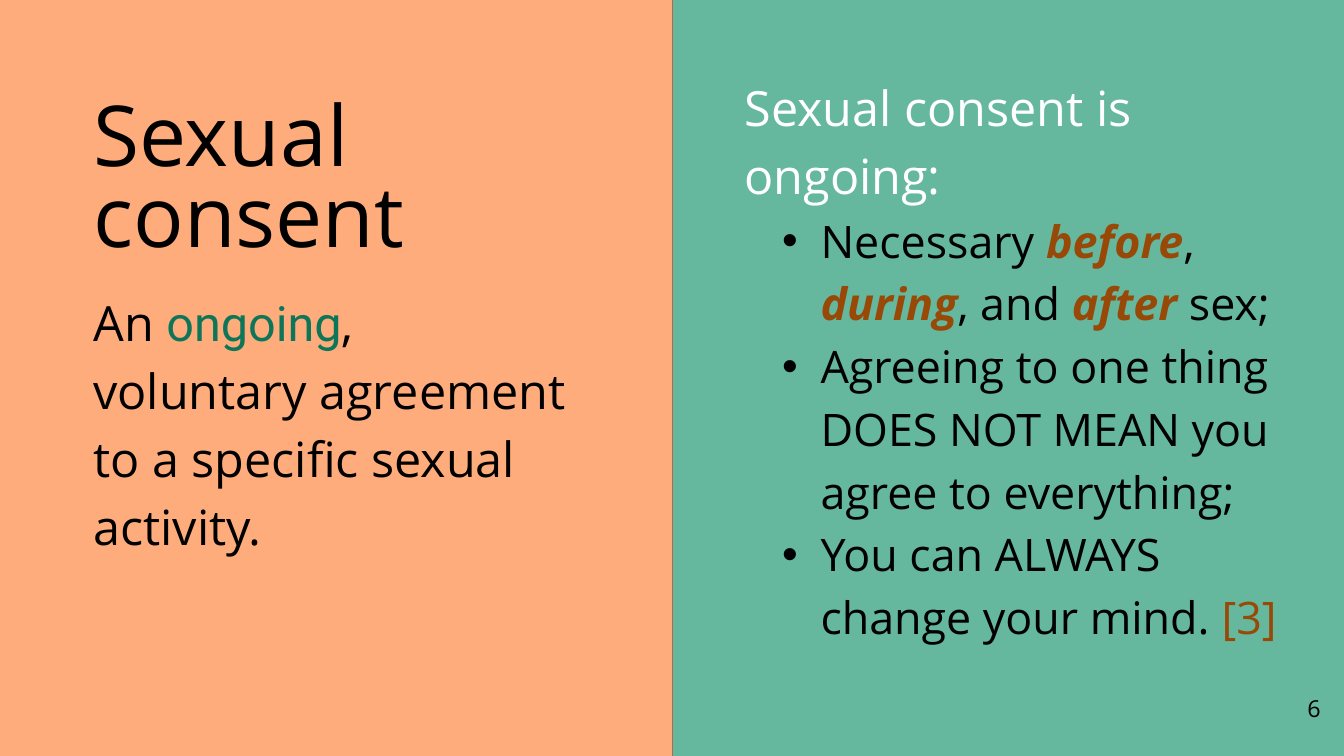
import pptx
import pptx.util
import pptx.dml.color
import pptx.enum.shapes
import pptx.enum.text
import pptx.oxml
import pptx.oxml.ns
import lxml.etree

Inches = pptx.util.Inches
Pt = pptx.util.Pt
ALIGN = pptx.enum.text.PP_ALIGN
ANCHOR = pptx.enum.text.MSO_ANCHOR

WIDTH, HEIGHT, DIVIDER = 20, 11.25, 10.01
BLACK, WHITE, GREEN, BROWN = "000000", "FFFFFF", "0E7658", "984807"
PEACH, TEAL = "FEAC7C", "65B79D"
ACCENT = {"color": BROWN, "bold": True, "italic": True}

TITLE = ["Sexual", "consent"]
DEFINITION = [
    "An ",
    ("ongoing", {"color": GREEN, "font": "Roboto"}),
    ", voluntary agreement to a specific sexual activity.",
]
HEADING = ["Sexual consent is", "ongoing:"]
POINTS = [
    ["Necessary ", ("before", ACCENT), ", ", ("during", ACCENT),
     ", and ", ("after", ACCENT), " sex;"],
    ["Agreeing to one thing DOES NOT MEAN you agree to everything;"],
    ["You can ALWAYS change your mind. ", ("[3]", {"color": BROWN})],
]
PAGE_NUMBER = "6"


def rgb(value):
    return pptx.dml.color.RGBColor.from_string(value)


def add_span(para, text, size, color=BLACK, font="Open Sans", bold=False, italic=False):
    span = para.add_run()
    span.text = text
    span.font.size = Pt(size)
    span.font.name = font
    span.font.bold = bold
    span.font.italic = italic
    span.font.color.rgb = rgb(color)


def add_para(frame, parts, size, spacing=None, color=BLACK, align=ALIGN.LEFT, bullet=False):
    para = frame.paragraphs[0]
    if para.runs:
        para = frame.add_paragraph()
    para.alignment = align
    para.space_before = Pt(0)
    if spacing:
        para.line_spacing = Pt(spacing)
    para.level = 1 if bullet else 0
    props = para._p.get_or_add_pPr()
    props.set("marL", str(Inches(1.13 if bullet else 0)))
    props.set("indent", str(Inches(-0.57 if bullet else 0)))
    mark = lxml.etree.SubElement(props, pptx.oxml.ns.qn("a:buChar" if bullet else "a:buNone"))
    if bullet:
        mark.set("char", "•")
    for part in parts:
        text, style = (part, {}) if isinstance(part, str) else part
        add_span(para, text, size, **{"color": color, **style})


def place(box, left, top, width, height, anchor=ANCHOR.TOP, inset=0):
    box.left, box.top = Inches(left), Inches(top)
    box.width, box.height = Inches(width), Inches(height)
    frame = box.text_frame
    frame.word_wrap = True
    frame.auto_size = pptx.enum.text.MSO_AUTO_SIZE.NONE
    frame.vertical_anchor = anchor
    frame.margin_left = frame.margin_right = Inches(inset)
    frame.margin_top = frame.margin_bottom = Inches(inset / 2)
    return frame


def add_backdrop(page):
    page.background.fill.solid()
    page.background.fill.fore_color.rgb = rgb(TEAL)
    divider = page.shapes.add_connector(
        pptx.enum.shapes.MSO_CONNECTOR.STRAIGHT,
        Inches(DIVIDER), Inches(0), Inches(DIVIDER), Inches(HEIGHT))
    divider.line.color.rgb = rgb(BLACK)
    divider.line.width = Pt(0.75)
    lxml.etree.SubElement(divider._element.spPr, pptx.oxml.ns.qn("a:effectLst"))
    panel = page.shapes.add_shape(
        pptx.enum.shapes.MSO_SHAPE.RECTANGLE,
        Inches(0), Inches(0), Inches(DIVIDER), Inches(HEIGHT))
    panel.shadow.inherit = False
    panel.fill.solid()
    panel.fill.fore_color.rgb = rgb(PEACH)
    panel.line.fill.background()
    tree = page.shapes._spTree
    for shape in (panel, divider):
        tree.remove(shape._element)
        tree.insert(2, shape._element)


def main():
    deck = pptx.Presentation()
    deck.slide_width, deck.slide_height = Inches(WIDTH), Inches(HEIGHT)
    page = deck.slides.add_slide(deck.slide_layouts.get_by_name("Two Content"))
    add_backdrop(page)
    title, definition, details = page.placeholders

    frame = place(title, 1.39, 1.51, 5.16, 2.49)
    for line in TITLE:
        add_para(frame, [line], 90, 87.3)

    add_para(place(definition, 1.39, 4.22, 7.18, 4), DEFINITION, 52, 72.8)

    frame = place(details, 11.08, 1.02, 8, 8.56)
    for line in HEADING:
        add_para(frame, [line], 52, 72.8, color=WHITE)
    for point in POINTS:
        add_para(frame, point, 48, 67.2, bullet=True)

    number = page.shapes.add_textbox(0, 0, 0, 0)
    frame = place(number, 16.83, 10.21, 2.92, 0.65, anchor=ANCHOR.MIDDLE, inset=0.1)
    add_para(frame, [PAGE_NUMBER], 25, align=ALIGN.RIGHT)

    deck.save("out.pptx")


if __name__ == "__main__":
    main()
